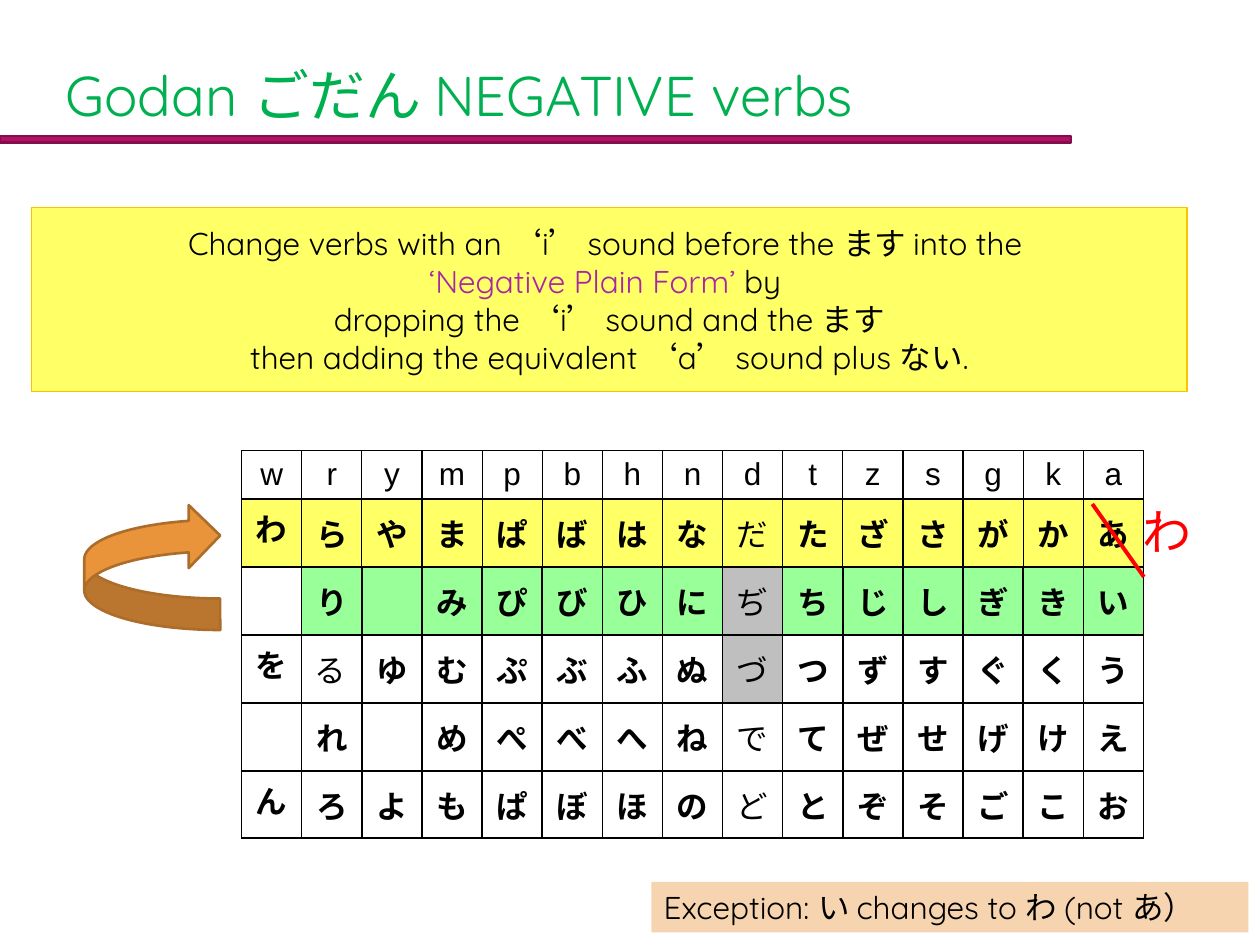
from lxml.etree import SubElement
from pptx import Presentation
from pptx.dml.color import RGBColor
from pptx.enum.shapes import MSO_CONNECTOR, MSO_SHAPE
from pptx.enum.text import MSO_ANCHOR as Anchor, MSO_AUTO_SIZE as AutoSize, PP_ALIGN as Align
from pptx.oxml.ns import qn
from pptx.util import Cm, Pt

TITLE = "Godan ごだん NEGATIVE verbs"
RULE = [
    [("Change verbs with an ‘i’ sound before the ます into the ", "text")],
    [("‘Negative Plain Form’ ", "accent"), ("by ", "text")],
    [("dropping the ‘i’ sound and the ます", "text")],
    [("then adding the equivalent ‘a’ sound plus ない.", "text")],
]
# One character per column; a space is an empty cell
KANA = [
    "wrympbhndtzsgka",
    "わらやまぱばはなだたざさがかあ",
    " り みぴびひにぢちじしぎきい",
    "をるゆむぷぶふぬづつずすぐくう",
    " れ めぺべへねでてぜせげけえ",
    "んろよもぱぼほのどとぞそごこお",
]
ROW_HEIGHTS = [0.97, 1.37, 1.37, 1.37, 1.37, 1.35]
A_ROW, I_ROW, U_ROW = 1, 2, 3
W_COLUMN, R_COLUMN, D_COLUMN = 0, 1, 8
REPLACEMENT = "わ"
EXCEPTION = "Exception: い changes to わ (not あ）"

THEME = {
    "font": "Quicksand", "kana_font": "Comic Neue", "plain_font": "Arial",
    "title_size": 32, "body_size": 18, "mark_size": 28,
    "title": "00B050", "text": "000000", "accent": "A925A5", "mark": "FF0000",
    "white": "FFFFFF", "yellow": "FFFF66", "yellow_line": "FFC000",
    "green": "99FF99", "grey": "BFBFBF", "arrow": "E9943A", "arrow_line": "AC6D2B",
    "peach": "F6D4B0", "bar": "B31166", "bar_line": "840D4B",
}


def color(name):
    return RGBColor.from_string(THEME[name])


def style(font, size="body_size", color_name="text", face="font", bold=False):
    font.name = THEME[face]
    font.size = Pt(THEME[size])
    font.bold = bold
    font.color.rgb = color(color_name)


def add_filled(slide, kind, box, fill, line=None, width=0.75):
    shape = slide.shapes.add_shape(kind, *map(Cm, box))
    shape.shadow.inherit = False
    shape.fill.solid()
    shape.fill.fore_color.rgb = color(fill)
    if line:
        shape.line.color.rgb = color(line)
        shape.line.width = Pt(width)
    else:
        shape.line.fill.background()
    return shape


def fit_to_text(text_frame):
    text_frame.word_wrap = False
    text_frame.auto_size = AutoSize.SHAPE_TO_FIT_TEXT
    text_frame.vertical_anchor = Anchor.TOP


def add_title(slide):
    title = slide.shapes.title
    title.left, title.top, title.width, title.height = map(Cm, (1.07, 0.53, 22.86, 2.74))
    title.text_frame.text = TITLE
    title.text_frame.vertical_anchor = Anchor.MIDDLE
    paragraph = title.text_frame.paragraphs[0]
    paragraph.alignment = Align.LEFT
    style(paragraph.runs[0].font, "title_size", "title")


def add_rule(slide):
    shape = add_filled(slide, MSO_SHAPE.RECTANGLE, (0.64, 4.19, 23.29, 3.71), "yellow", "yellow_line")
    text_frame = shape.text_frame
    text_frame.vertical_anchor = Anchor.MIDDLE
    for index, parts in enumerate(RULE):
        paragraph = text_frame.add_paragraph() if index else text_frame.paragraphs[0]
        paragraph.alignment = Align.CENTER
        for text, color_name in parts:
            run = paragraph.add_run()
            run.text = text
            style(run.font, color_name=color_name)


def set_borders(cell, width):
    properties = cell._tc.get_or_add_tcPr()
    for side in ("lnL", "lnR", "lnT", "lnB"):
        line = SubElement(properties, qn(f"a:{side}"), w=str(Pt(width)))
        fill = SubElement(line, qn("a:solidFill"))
        SubElement(fill, qn("a:srgbClr"), val=THEME["text"])


def cell_fill(row, column):
    if column == D_COLUMN and row in (I_ROW, U_ROW):
        return "grey"
    if row == A_ROW:
        return "yellow"
    return "green" if row == I_ROW and column != W_COLUMN else "white"


def cell_face(row, column):
    if (row, column) == (U_ROW, R_COLUMN):
        return "font"
    return "plain_font" if row == 0 or column == D_COLUMN else "kana_font"


def add_kana_table(slide):
    columns, width = len(KANA[0]), Cm(18.18)
    frame = slide.shapes.add_table(len(KANA), columns, Cm(4.87), Cm(9.09), width, Cm(sum(ROW_HEIGHTS)))
    table = frame.table
    for column in table.columns:
        column.width = width // columns
    for r, letters in enumerate(KANA):
        table.rows[r].height = Cm(ROW_HEIGHTS[r])
        for c, letter in enumerate(letters):
            cell = table.cell(r, c)
            set_borders(cell, 0.75 if r <= A_ROW else 1)
            cell.fill.solid()
            cell.fill.fore_color.rgb = color(cell_fill(r, c))
            cell.vertical_anchor = Anchor.TOP if c == W_COLUMN else Anchor.MIDDLE
            cell.text_frame.text = letter.strip()
            face = cell_face(r, c)
            paragraph = cell.text_frame.paragraphs[0]
            paragraph.alignment = Align.LEFT if face == "font" else Align.CENTER
            for run in paragraph.runs:
                style(run.font, face=face, bold=face == "kana_font")


def add_replacement(slide):
    """Strike out the last kana of the a row and write its replacement beside it."""
    strike = slide.shapes.add_connector(
        MSO_CONNECTOR.STRAIGHT, Cm(22.02), Cm(10.16), Cm(23.06), Cm(11.63))
    strike.line.color.rgb = color("mark")
    strike.line.width = Pt(2.25)
    SubElement(strike._element.spPr, qn("a:effectLst"))

    text_frame = slide.shapes.add_textbox(*map(Cm, (22.78, 9.98, 1.5, 1.45))).text_frame
    fit_to_text(text_frame)
    text_frame.text = REPLACEMENT
    paragraph = text_frame.paragraphs[0]
    paragraph.alignment = Align.CENTER
    style(paragraph.runs[0].font, "mark_size", "mark")


def add_exception(slide):
    shape = add_filled(slide, MSO_SHAPE.RECTANGLE, (13.13, 17.78, 12.04, 1.02), "peach")
    fit_to_text(shape.text_frame)
    shape.text_frame.text = EXCEPTION
    paragraph = shape.text_frame.paragraphs[0]
    paragraph.alignment = Align.LEFT
    style(paragraph.runs[0].font)


def main():
    presentation = Presentation()
    presentation.slide_width, presentation.slide_height = Cm(25.4), Cm(19.05)
    slide = presentation.slides.add_slide(presentation.slide_layouts[5])
    add_title(slide)
    add_rule(slide)
    add_kana_table(slide)
    arrow = add_filled(slide, MSO_SHAPE.CURVED_DOWN_ARROW, (1.8, 10.06, 2.54, 2.74),
                       "arrow", "arrow_line", 1.5)
    arrow.rotation = 270
    add_replacement(slide)
    add_exception(slide)
    add_filled(slide, MSO_SHAPE.RECTANGLE, (0, 2.74, 21.59, 0.13), "bar", "bar_line", 1.5)
    presentation.save("out.pptx")


if __name__ == "__main__":
    main()
